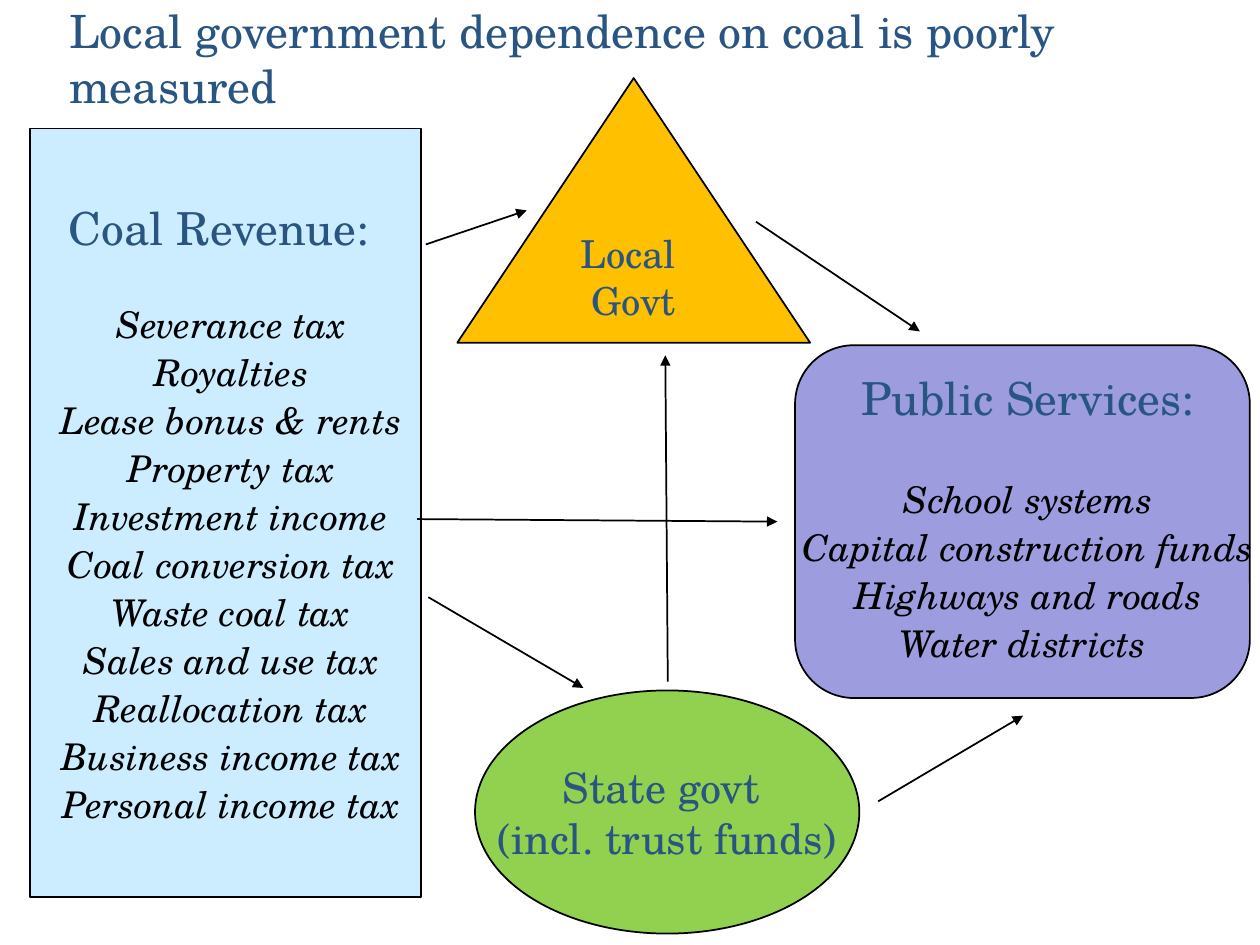
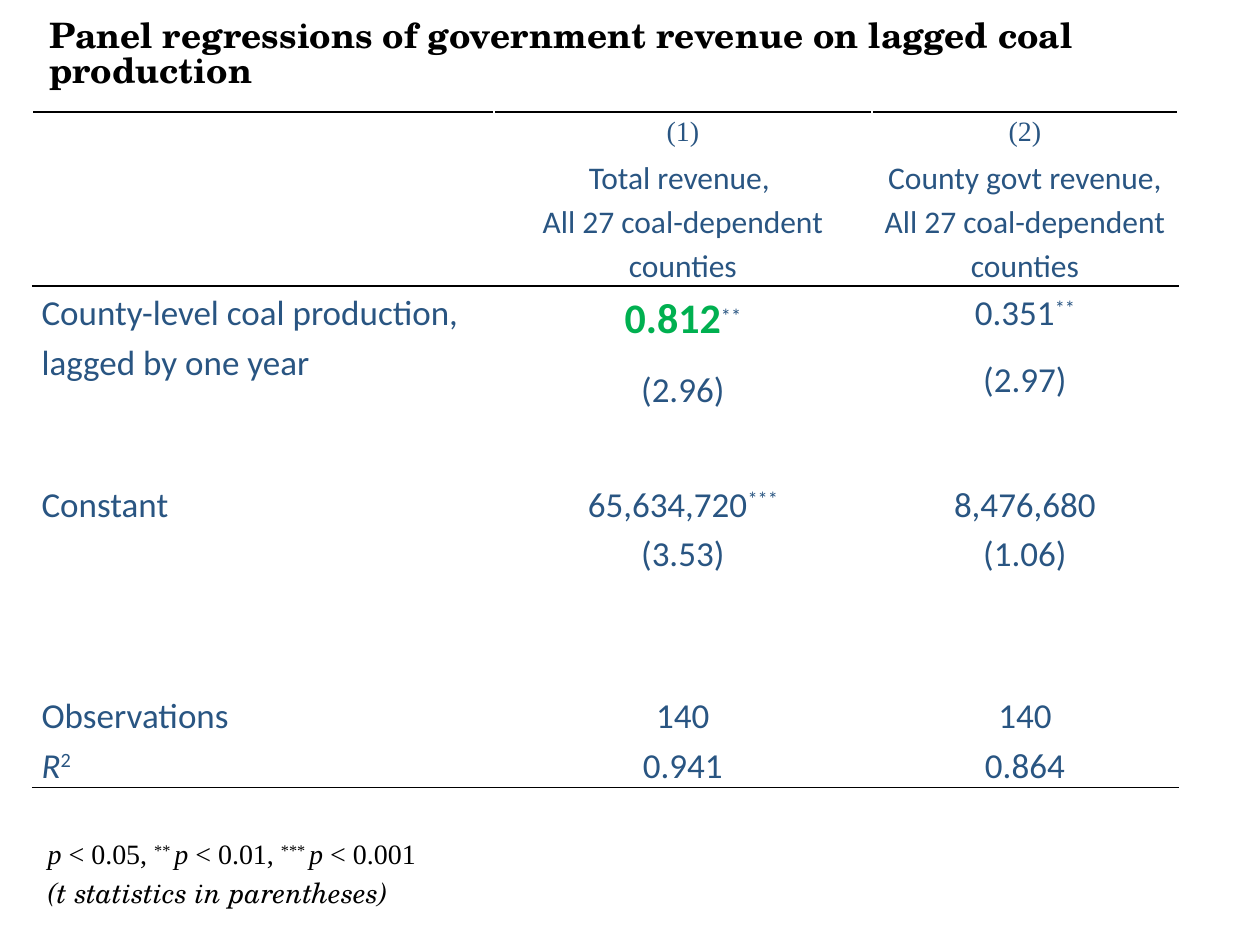
from dataclasses import dataclass

from lxml import etree
from pptx import Presentation
from pptx import util as u
from pptx.dml.color import RGBColor
from pptx.enum import shapes, text
from pptx.oxml import ns

NAVY = RGBColor(0x29, 0x55, 0x82)
BLACK = RGBColor(0, 0, 0)
GREEN = RGBColor(0x00, 0xB0, 0x50)
ICE = RGBColor(0xCC, 0xEC, 0xFF)
LIME = RGBColor(0x92, 0xD0, 0x50)
AMBER = RGBColor(0xFF, 0xC0, 0x00)
LILAC = RGBColor(0x9C, 0x9C, 0xDF)

SERIF, SANS, ROMAN = "TeX Gyre Schola", "Calibri", "Times New Roman"
COLUMNS, ROWS = 100, 75
CENTER, LEFT = text.PP_ALIGN.CENTER, text.PP_ALIGN.LEFT
MIDDLE, TOP = text.MSO_ANCHOR.MIDDLE, text.MSO_ANCHOR.TOP

HEADING = {"name": SERIF, "size": u.Pt(26), "color": NAVY}
ITEM = {"name": SERIF, "size": u.Pt(21), "color": BLACK, "italic": True}
BODY = {"name": SANS, "size": u.Pt(20), "color": NAVY}
COLUMN_HEAD = BODY | {"size": u.Pt(18)}
COLUMN_NUMBER = {"name": ROMAN, "size": u.Pt(16), "color": NAVY}
NOTE = COLUMN_NUMBER | {"color": BLACK}
NOTE_ITALIC = NOTE | {"italic": True}
SLIDE_TITLE = HEADING | {"size": u.Pt(26.2)}
TABLE_TITLE = {"name": SERIF, "size": u.Pt(20), "color": BLACK, "bold": True}
ESTIMATE = BODY | {"size": u.Pt(24), "color": GREEN, "bold": True}

CENTERED = {"alignment": CENTER}
LIST_LINE = CENTERED | {"line_spacing": 0.85, "space_after": u.Pt(6)}
TABLE_LINE = {"line_spacing": 1.15}
INDENT = u.Inches(0.09)


@dataclass
class Box:
    """A region in slide lengths, divided into its own grid."""

    left: float
    top: float
    width: float
    height: float

    def point(self, column, row):
        """Return the slide position of a grid point."""
        return (round(self.left + column * self.width / COLUMNS),
                round(self.top + row * self.height / ROWS))

    def region(self, column, row, columns, rows):
        """Return the region that covers the given grid cells."""
        return Box(*self.point(column, row), round(columns * self.width / COLUMNS),
                   round(rows * self.height / ROWS))

    def frame(self):
        """Return left, top, width and height."""
        return self.left, self.top, self.width, self.height


def raised(style):
    """Return the style as superscript."""
    return style | {"superscript": True}


def line(*runs, indent=0, **layout):
    """Describe one paragraph: its runs, its indent and its layout."""
    return runs, indent, layout


def format_run(run, style):
    """Apply a dict of format values to a run."""
    for key, value in style.items():
        if key == "color":
            run.font.color.rgb = value
        elif key == "superscript":
            run.font._element.set("baseline", "30000")
        else:
            setattr(run.font, key, value)


def write(frame, lines):
    """Fill a text frame with described paragraphs."""
    for number, (runs, indent, layout) in enumerate(lines):
        paragraph = frame.add_paragraph() if number else frame.paragraphs[0]
        if indent:
            paragraph._p.get_or_add_pPr().set("marL", str(indent))
        for key, value in layout.items():
            setattr(paragraph, key, value)
        for words, style in runs:
            run = paragraph.add_run()
            run.text = words
            format_run(run, style)


def set_frame(frame, wrap=True, anchor=MIDDLE, inset=0.04):
    """Set wrapping, anchor and equal insets of a text frame."""
    frame.word_wrap = wrap
    frame.vertical_anchor = anchor
    for side in ("left", "right", "top", "bottom"):
        setattr(frame, f"margin_{side}", u.Inches(inset))


def add_title(slide, box, title_line):
    """Place a slide title."""
    shape = slide.shapes.add_textbox(*box.frame())
    set_frame(shape.text_frame)
    write(shape.text_frame, [title_line])


def add_node(slide, box, kind, fill, lines):
    """Place an outlined shape with centred text."""
    shape = slide.shapes.add_shape(kind, *box.frame())
    shape.shadow.inherit = False
    shape.fill.solid()
    shape.fill.fore_color.rgb = fill
    shape.line.color.rgb = BLACK
    shape.line.width = u.Pt(1)
    set_frame(shape.text_frame, wrap=False)
    write(shape.text_frame, lines)


def add_arrow(slide, start, end):
    """Draw a thin black arrow."""
    arrow = slide.shapes.add_connector(shapes.MSO_CONNECTOR.STRAIGHT, *start, *end)
    arrow.line.color.rgb = BLACK
    arrow.line.width = u.Pt(1)
    etree.SubElement(arrow.line._get_or_add_ln(), ns.qn("a:tailEnd"), type="triangle")
    etree.SubElement(arrow._element.spPr, ns.qn("a:effectLst"))


def item_lines(items, gap):
    """Describe an italic list that starts after a gap."""
    first, *others = items
    return [line((first, ITEM), indent=INDENT, space_before=u.Pt(gap), **LIST_LINE),
            *(line((item, ITEM), indent=INDENT, **LIST_LINE) for item in others)]


def add_flow_diagram(slide, box):
    """Draw revenue, governments and services with the arrows between them."""
    kinds = shapes.MSO_SHAPE
    taxes = ["Severance tax", "Royalties", "Lease bonus & rents", "Property tax",
             "Investment income", "Coal conversion tax", "Waste coal tax",
             "Sales and use tax", "Reallocation tax", "Business income tax",
             "Personal income tax"]
    services = ["School systems", "Capital construction funds",
                "Highways and roads", "Water districts "]
    state_style = HEADING | {"size": u.Pt(24)}
    local_style = HEADING | {"size": u.Pt(22)}
    nodes = [
        ((2.4, 10.2, 31, 61), kinds.RECTANGLE, ICE,
         [line(("Coal Revenue: ", HEADING), **CENTERED), *item_lines(taxes, 31)]),
        ((37.7, 54.8, 30.5, 19.3), kinds.OVAL, LIME,
         [line((words, state_style), **CENTERED)
          for words in ("State govt ", "(incl. trust funds)")]),
        ((36.3, 6.2, 28, 21), kinds.ISOSCELES_TRIANGLE, AMBER,
         [line((words, local_style), **CENTERED) for words in ("Local ", "Govt")]),
        ((63.1, 27.4, 36.1, 28), kinds.ROUNDED_RECTANGLE, LILAC,
         [line(("Public Services:", HEADING), indent=INDENT, **LIST_LINE),
          *item_lines(services, 27.4)]),
    ]
    for cells, kind, fill, lines in nodes:
        add_node(slide, box.region(*cells), kind, fill, lines)
    arrows = [((34, 47.4), (46.3, 54.6)), ((33.8, 19.4), (41.8, 16.7)),
              ((53, 54.1), (52.8, 28.2)), ((60, 17.6), (73, 26.3)),
              ((69.7, 63.6), (81.2, 56.8)), ((33.1, 41.2), (61.7, 41.4))]
    for start, end in arrows:
        add_arrow(slide, box.point(*start), box.point(*end))


def add_rule(cell, side):
    """Draw a black rule on the T or B side of a cell."""
    rule = etree.Element(ns.qn(f"a:ln{side}"), w=str(u.Pt(1)))
    fill = etree.SubElement(rule, ns.qn("a:solidFill"))
    etree.SubElement(fill, ns.qn("a:srgbClr"), val=str(BLACK))
    cell._tc.get_or_add_tcPr().insert(0, rule)


def regression_rows():
    """Return the table's cells as lists of lines, each line a list of runs."""
    stars = raised(BODY)
    coverage = "All 27 coal-dependent counties"
    return [
        [[], [[("(1)", COLUMN_NUMBER)]], [[("(2)", COLUMN_NUMBER)]]],
        [[], [[("Total revenue, ", COLUMN_HEAD)], [(coverage, COLUMN_HEAD)]],
         [[("County govt revenue, " + coverage, COLUMN_HEAD)]]],
        [[[("County-level coal production, lagged by one year", BODY)]],
         [[("0.812", ESTIMATE), ("**", stars)], [("(2.96)", BODY)]],
         [[("0.351", BODY), ("**", stars)], [("(2.97)", BODY)]]],
        [[[("Constant", BODY)]],
         [[("65,634,720", BODY), ("***", stars)], [("(3.53)", BODY)]],
         [[("8,476,680", BODY)], [("(1.06)", BODY)]]],
        [[], [], []],
        [[[("Observations", BODY)]], [[("140", BODY)]], [[("140", BODY)]]],
        [[[("R", BODY | {"italic": True}), ("2", stars)]],
         [[("0.941", BODY)]], [[("0.864", BODY)]]],
    ]


def add_regression_table(slide, box):
    """Place the regression table with its horizontal rules."""
    rows = regression_rows()
    column_shares = (3.66, 3, 2.43)
    row_shares = (0.33, 1.05, 1.52, 0.78, 0.9, 0.39, 0.39)
    rules = {0: "T", 1: "B", 2: "T", 6: "B"}
    coefficient_row = 2
    table = slide.shapes.add_table(len(rows), len(column_shares), *box.frame()).table
    table.first_row = table.horz_banding = False
    for column, share in zip(table.columns, column_shares):
        column.width = round(box.width * share / sum(column_shares))
    for row, share in zip(table.rows, row_shares):
        row.height = round(box.height * share / sum(row_shares))
    for r, row in enumerate(rows):
        for c, lines in enumerate(row):
            cell = table.cell(r, c)
            cell.fill.background()
            cell.margin_left = cell.margin_right = u.Inches(0.07)
            cell.margin_top = cell.margin_bottom = 0
            cell.vertical_anchor = TOP
            layout = TABLE_LINE | {"alignment": CENTER if c else LEFT}
            if r == coefficient_row and c:
                layout["space_after"] = u.Pt(10)
            write(cell.text_frame, [line(*runs, **layout) for runs in lines])
            if r in rules:
                add_rule(cell, rules[r])


def add_significance_note(slide, box):
    """Place the note on significance levels."""
    frame = slide.shapes.add_textbox(*box.frame()).text_frame
    frame.word_wrap = True
    symbol = ("p", NOTE_ITALIC)
    write(frame, [
        line(symbol, (" < 0.05, ", NOTE), ("** ", raised(NOTE)),
             symbol, (" < 0.01, ", NOTE), ("*** ", raised(NOTE)),
             symbol, (" < 0.001", NOTE), **TABLE_LINE),
        line(("(t statistics in parentheses)", NOTE_ITALIC | {"name": SERIF}),
             **TABLE_LINE)])


def build_dependence_slide(slide, box):
    """Build the slide on local government dependence."""
    title = "Local government dependence on coal is poorly measured"
    add_title(slide, box.region(5.1, 1.6, 94.2, 6), line((title, SLIDE_TITLE)))
    add_flow_diagram(slide, box)


def build_regression_slide(slide, box):
    """Build the slide with the panel regressions."""
    title = "Panel regressions of government revenue on lagged coal production"
    add_title(slide, box.region(2.6, 1.4, 90, 6),
              line((title, TABLE_TITLE), indent=INDENT, line_spacing=0.85,
                   space_after=u.Pt(6)))
    add_regression_table(slide, box.region(2.6, 8.9, 90.9, 53.6))
    add_significance_note(slide, box.region(2.8, 65.5, 97.2, 6.9))


def main():
    """Build and save the presentation."""
    presentation = Presentation()
    presentation.slide_width, presentation.slide_height = u.Inches(10), u.Inches(7.5)
    page = Box(0, 0, presentation.slide_width, presentation.slide_height)
    blank = presentation.slide_layouts[6]
    for build in (build_dependence_slide, build_regression_slide):
        build(presentation.slides.add_slide(blank), page)
    presentation.save("out.pptx")


if __name__ == "__main__":
    main()
